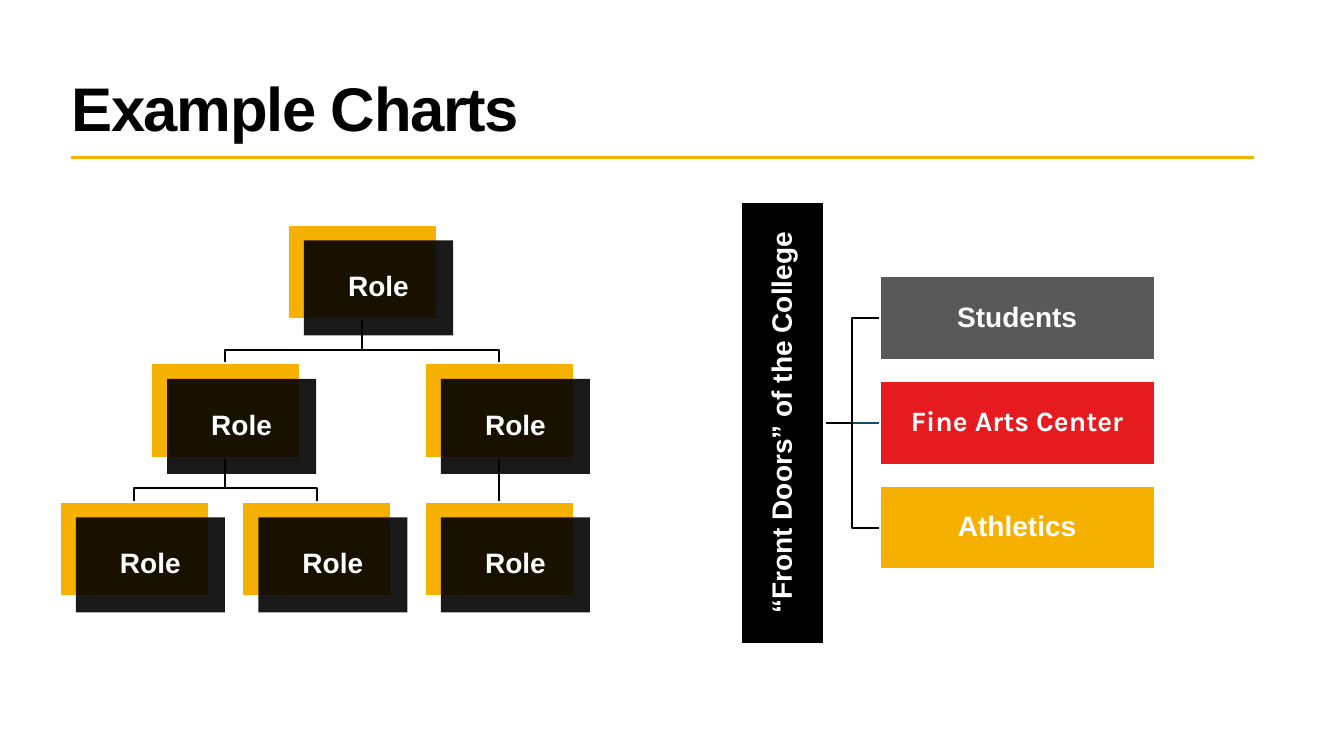
"""Build a slide with a role hierarchy and a chart of the college's front doors."""
from pptx import Presentation
from pptx.dml.color import RGBColor
from pptx.enum.shapes import MSO_CONNECTOR as LINK, MSO_SHAPE as SHAPE
from pptx.enum.text import MSO_ANCHOR as ANCHOR, PP_ALIGN as ALIGN
from pptx.oxml.ns import qn
from pptx.util import Cm, Pt
from lxml.etree import SubElement

BLACK = RGBColor(0x00, 0x00, 0x00)
WHITE = RGBColor(0xFF, 0xFF, 0xFF)
GOLD = RGBColor(0xF5, 0xB0, 0x00)
GREY = RGBColor(0x59, 0x59, 0x59)
RED = RGBColor(0xE5, 0x1B, 0x1F)
TEAL = RGBColor(0x11, 0x4D, 0x68)

TITLE = "Example Charts"
# role, column, level, index of parent
ROLES = [
    ("Role", 1.25, 0, None),
    ("Role", 0.5, 1, 0),
    ("Role", 0, 2, 1),
    ("Role", 1, 2, 1),
    ("Role", 2, 1, 0),
    ("Role", 2, 2, 4),
]
HUB = "“Front Doors” of the College"
DOORS = [
    ("Students", GREY, "Arial"),
    ("Fine Arts Center", RED, "Karla"),
    ("Athletics", GOLD, "Arial"),
]

ROLE_LEFT, ROLE_TOP, ROLE_W, ROLE_H = 1.5, 5.66, 3.76, 2.39
COLUMN_STEP, LEVEL_STEP = 4.6, 3.49
CARD_DX, CARD_DY, STEM = 0.41, 0.4, 0.76
DOOR_LEFT, DOOR_TOP, DOOR_W, DOOR_H, DOOR_STEP = 22.17, 6.96, 6.93, 2.11, 2.64
HUB_LENGTH, HUB_RIGHT = 11.15, 20.78

prs = Presentation()
prs.slide_width, prs.slide_height = Cm(33.87), Cm(19.05)
slide = prs.slides.add_slide(prs.slide_layouts[6])
shapes = slide.shapes


def style_text(frame, text, size, color, font="Arial"):
    frame.text = text
    frame.word_wrap = True
    frame.vertical_anchor = ANCHOR.MIDDLE
    paragraph = frame.paragraphs[0]
    paragraph.line_spacing = 0.9
    run = paragraph.runs[0]
    run.font.size, run.font.bold, run.font.name = Pt(size), True, font
    run.font.color.rgb = color
    return paragraph


def add_box(left, top, width, height, fill, outlined=True):
    box = shapes.add_shape(SHAPE.RECTANGLE, Cm(left), Cm(top), Cm(width), Cm(height))
    box.shadow.inherit = False
    box.fill.solid()
    box.fill.fore_color.rgb = fill
    if outlined:
        box.line.color.rgb, box.line.width = WHITE, Pt(1.5)
    else:
        box.line.fill.background()
    return box


def label(box, text, inset, font="Arial"):
    frame = box.text_frame
    frame.margin_left = frame.margin_right = Cm(inset)
    frame.margin_top = frame.margin_bottom = Cm(inset)
    style_text(frame, text, 20, WHITE, font).alignment = ALIGN.CENTER


def add_straight(start, end, color, width=1.5):
    line = shapes.add_connector(LINK.STRAIGHT, *map(Cm, start + end))
    line.line.color.rgb, line.line.width = color, Pt(width)
    SubElement(line._element.spPr, qn("a:effectLst"))
    return line


def add_branch(*points):
    start, *rest = [(Cm(x), Cm(y)) for x, y in points]
    builder = shapes.build_freeform(*start)
    builder.add_line_segments(rest, close=False)
    branch = builder.convert_to_shape()
    branch.shadow.inherit = False
    branch.fill.background()
    branch.line.color.rgb, branch.line.width = BLACK, Pt(1.5)


add_straight((1.8, 3.96), (31.6, 3.96), GOLD, 2.25)
title = shapes.add_textbox(Cm(1.55), Cm(1.63), Cm(29.21), Cm(2.34))
heading = style_text(title.text_frame, TITLE, 44, BLACK)
heading.runs[0].font._element.set("spc", "-100")

corners = [(ROLE_LEFT + column * COLUMN_STEP, ROLE_TOP + level * LEVEL_STEP)
           for _, column, level, _ in ROLES]
straight_links = []
for child, (_, column, _, parent) in enumerate(ROLES):
    if parent is None:
        continue
    start_x, start_y = corners[parent][0] + ROLE_W / 2, corners[parent][1] + ROLE_H
    end_x, end_y = corners[child][0] + ROLE_W / 2, corners[child][1]
    if column == ROLES[parent][1]:
        line = add_straight((start_x, start_y), (end_x, end_y), BLACK)
        straight_links.append((line, parent, child))
    else:
        bend_y = start_y + STEM
        add_branch((start_x, start_y), (start_x, bend_y), (end_x, bend_y), (end_x, end_y))

role_backs = []
for (role, *_), (left, top) in zip(ROLES, corners):
    role_backs.append(add_box(left, top, ROLE_W, ROLE_H, GOLD))
    card = add_box(left + CARD_DX, top + CARD_DY, ROLE_W, ROLE_H, BLACK, outlined=False)
    card_color = card._element.spPr.find(qn("a:solidFill"))[0]
    SubElement(card_color, qn("a:alpha"), val="90000")
    label(card, role, 0.2)
for line, parent, child in straight_links:
    line.begin_connect(role_backs[parent], 2)
    line.end_connect(role_backs[child], 0)

middle = len(DOORS) // 2
door_tops = [DOOR_TOP + i * DOOR_STEP for i in range(len(DOORS))]
hub_y = door_tops[middle] + DOOR_H / 2
bend_x = (HUB_RIGHT + DOOR_LEFT) / 2
middle_link = add_straight((HUB_RIGHT, hub_y), (DOOR_LEFT, hub_y), TEAL)
for i, top in enumerate(door_tops):
    if i != middle:
        door_y = top + DOOR_H / 2
        add_branch((HUB_RIGHT, hub_y), (bend_x, hub_y), (bend_x, door_y), (DOOR_LEFT, door_y))

hub = add_box(HUB_RIGHT - DOOR_H / 2 - HUB_LENGTH / 2, door_tops[middle],
              HUB_LENGTH, DOOR_H, BLACK)
hub.rotation = 270
label(hub, HUB, 0.03)
doors = []
for (name, color, font), top in zip(DOORS, door_tops):
    door = add_box(DOOR_LEFT, top, DOOR_W, DOOR_H, color)
    label(door, name, 0.03, font)
    doors.append(door)
middle_link.begin_connect(hub, 2)
middle_link.begin_x, middle_link.begin_y = Cm(HUB_RIGHT), Cm(hub_y)
middle_link.end_connect(doors[middle], 1)

prs.save("out.pptx")
